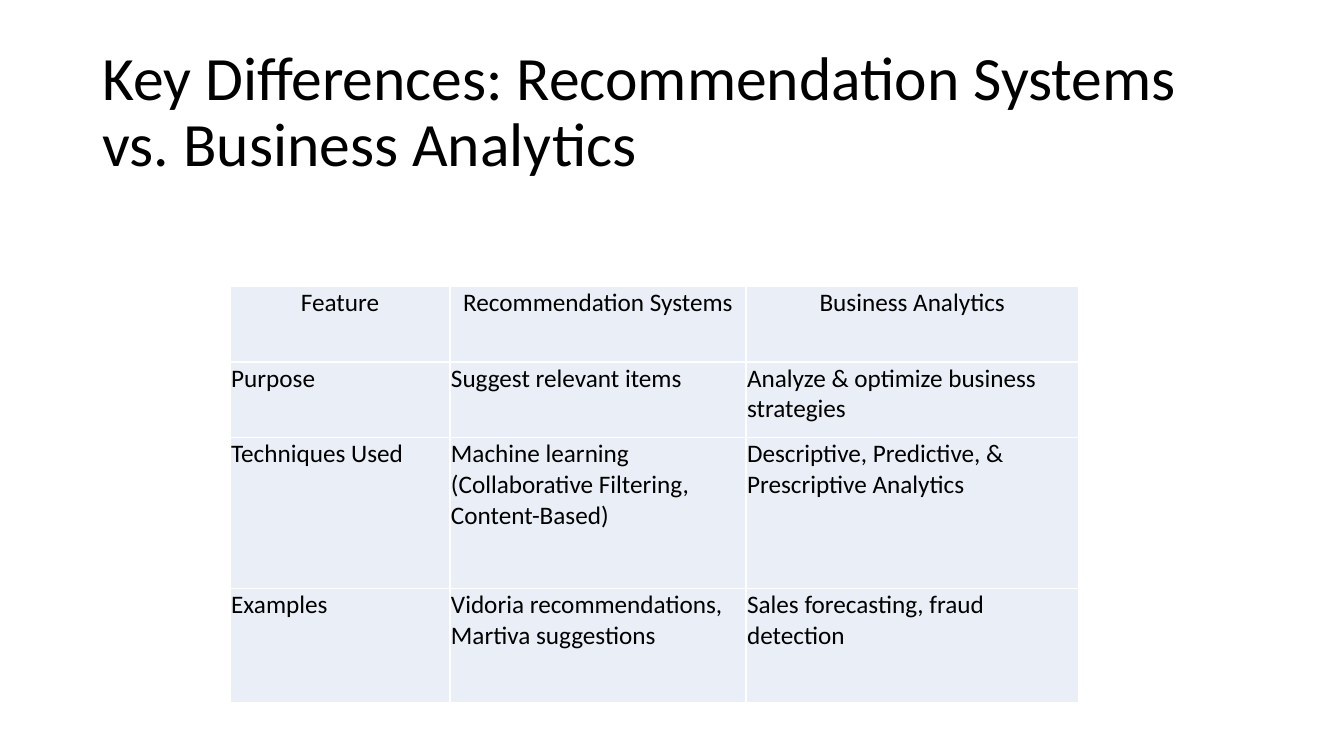
from lxml.etree import SubElement
from pptx import Presentation
from pptx.dml.color import RGBColor
from pptx.enum.text import MSO_ANCHOR as Anchor, PP_ALIGN as Align
from pptx.oxml.ns import qn
from pptx.util import Pt

COLUMN_WIDTHS = [157, 211.5, 237.5]
ROW_HEIGHTS = [54, 54, 108, 81]
COMPARISON = [
    ["Feature", "Recommendation Systems", "Business Analytics"],
    ["Purpose", "Suggest relevant items", "Analyze & optimize business strategies"],
    ["Techniques Used", "Machine learning (Collaborative Filtering, Content-Based)",
     "Descriptive, Predictive, & Prescriptive Analytics"],
    ["Examples", "Vidoria recommendations, Martiva suggestions",
     "Sales forecasting, fraud detection"],
]


def color(value):
    return RGBColor.from_string(value)


class SlideBuilder:
    font = "Calibri"
    ink = "000000"
    cell_fill = "EAEFF7"
    border = "FFFFFF"

    def __init__(self, page):
        self.page = page

    def add_span(self, para, text, size):
        span = para.add_run()
        span.text = text
        span.font.name = self.font
        span.font.size = Pt(size)
        span.font.color.rgb = color(self.ink)

    def title(self, text, left, top, width, height):
        box = self.page.shapes.add_textbox(Pt(left), Pt(top), Pt(width), Pt(height))
        frame = box.text_frame
        frame.word_wrap = True
        frame.vertical_anchor = Anchor.MIDDLE
        para = frame.paragraphs[0]
        para.line_spacing = 0.9
        self.add_span(para, text, 44)

    def outline(self, cell):
        properties = cell._tc.get_or_add_tcPr()
        for index, side in enumerate(["lnL", "lnR", "lnT", "lnB"]):
            line = SubElement(properties, qn(f"a:{side}"), w=str(Pt(1)))
            fill = SubElement(line, qn("a:solidFill"))
            SubElement(fill, qn("a:srgbClr"), val=self.border)
            properties.insert(index, line)

    def cell(self, cell, text, align):
        cell.margin_left = cell.margin_right = cell.margin_top = Pt(0.75)
        cell.margin_bottom = Pt(0)
        cell.vertical_anchor = Anchor.TOP
        cell.fill.solid()
        cell.fill.fore_color.rgb = color(self.cell_fill)
        self.outline(cell)
        para = cell.text_frame.paragraphs[0]
        para.alignment = align
        self.add_span(para, text, 18)

    def table(self, rows, left, top, widths, heights):
        frame = self.page.shapes.add_table(
            len(rows), len(widths), Pt(left), Pt(top), Pt(sum(widths)), Pt(sum(heights)))
        table = frame.table
        for column, width in zip(table.columns, widths):
            column.width = Pt(width)
        for row_index, (texts, height) in enumerate(zip(rows, heights)):
            table.rows[row_index].height = Pt(height)
            align = Align.LEFT if row_index else Align.CENTER
            for column_index, text in enumerate(texts):
                self.cell(table.cell(row_index, column_index), text, align)


def main():
    deck = Presentation()
    deck.slide_width, deck.slide_height = Pt(960), Pt(540)
    builder = SlideBuilder(deck.slides.add_slide(deck.slide_layouts[6]))
    builder.title("Key Differences: Recommendation Systems vs. Business Analytics",
                  66, 28.75, 828, 104.4)
    builder.table(COMPARISON, 164.4, 204.6, COLUMN_WIDTHS, ROW_HEIGHTS)
    deck.save("out.pptx")


if __name__ == "__main__":
    main()
